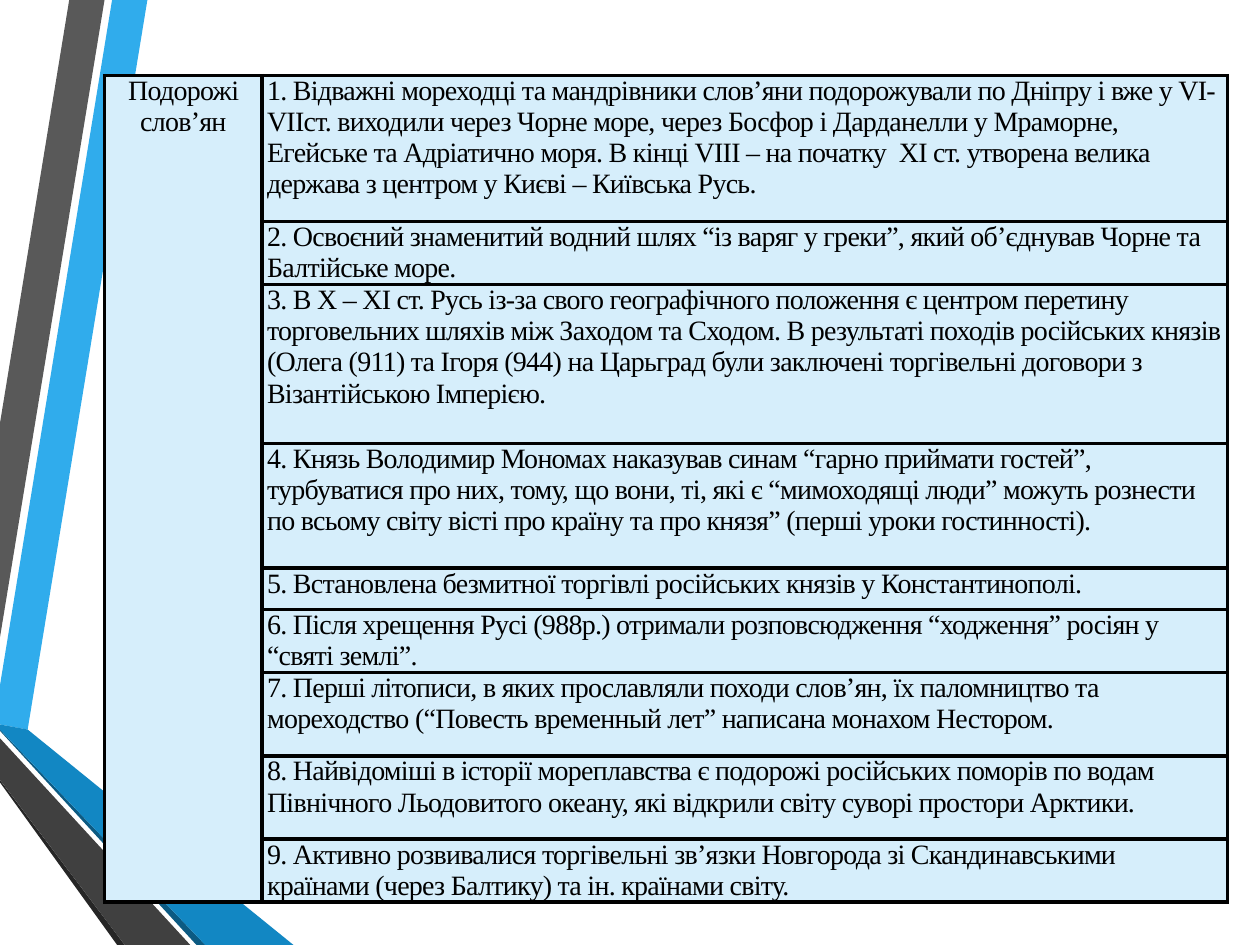
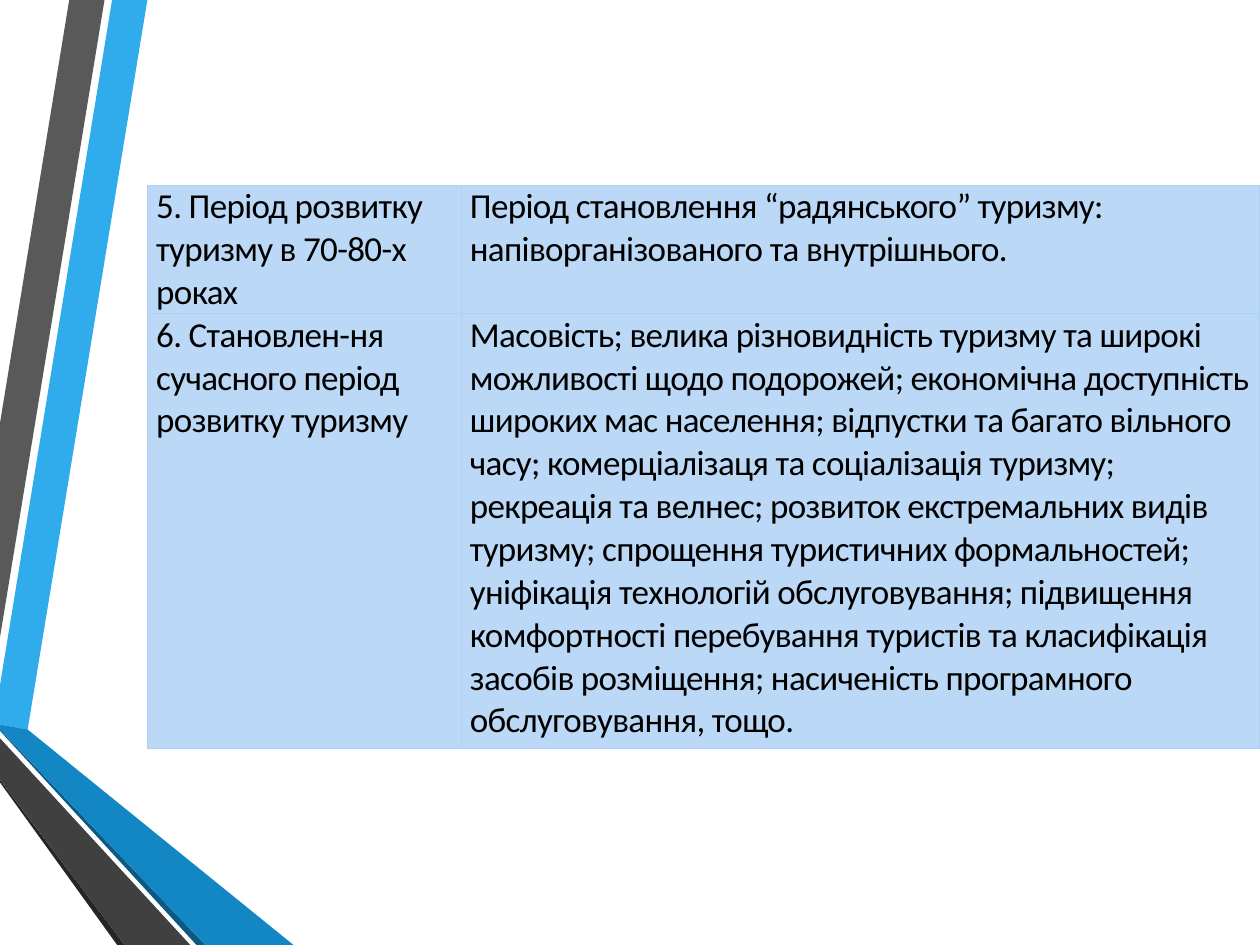
from lxml.etree import SubElement
from pptx import Presentation
from pptx.dml.color import RGBColor
from pptx.enum.text import PP_ALIGN
from pptx.oxml.ns import qn
from pptx.util import Inches, Pt

BANDS = [
    ("30ACEC", [(0, 5.44), (0, 5.75), (0.22, 5.79), (1.17, 0), (0.89, 0)]),
    ("595959", [(0.83, 0), (0.55, 0), (0, 3.36), (0, 5.06)]),
    ("262626", [(0, 6.19), (0, 6.21), (0.93, 7.5), (0.99, 7.5)]),
    ("0C5A82", [(0, 5.79), (0, 5.8), (1.56, 7.5), (1.63, 7.5)]),
    ("1287C3", [(0, 5.79), (1.63, 7.5), (2.33, 7.5), (0.22, 5.79), (0, 5.75)]),
    ("404040", [(0, 6.19), (0.99, 7.5), (1.51, 7.5), (0, 5.86)]),
]

JOURNEYS_STYLE = {"font": "Times New Roman", "size": 16, "fill": "D6EEFB",
                  "border": "000000", "border_width": 2.25, "inset": 0.04}
PERIODS_STYLE = {"font": "Calibri", "size": 20, "fill": "BBD9F6",
                 "border": "AED2F4", "border_width": 0.75, "inset": 0.07}

JOURNEYS_TITLE = "Подорожі слов’ян"
JOURNEYS = [
    (1.16, "1. Відважні мореходці та мандрівники слов’яни подорожували по Дніпру і вже у "
           "VI-VIIст. виходили через Чорне море, через Босфор і Дарданелли у Мраморне, "
           "Егейське та Адріатично моря. В кінці VIII – на початку  XI ст. утворена велика "
           "держава з центром у Києві – Київська Русь."),
    (0.5, "2. Освоєний знаменитий водний шлях “із варяг у греки”, який об’єднував Чорне та "
          "Балтійське море."),
    (1.26, "3. В X – XI ст. Русь із-за свого географічного положення є центром перетину "
           "торговельних шляхів між Заходом та Сходом. В результаті походів російських князів "
           "(Олега (911) та Ігоря (944) на Царьград були заключені торгівельні договори з "
           "Візантійською Імперією."),
    (0.99, "4. Князь Володимир Мономах наказував синам “гарно приймати гостей”, турбуватися "
           "про них, тому, що вони, ті, які є “мимоходящі люди” можуть рознести по всьому "
           "світу вісті про країну та про князя” (перші уроки гостинності)."),
    (0.33, "5. Встановлена безмитної торгівлі російських князів у Константинополі."),
    (0.5, "6. Після хрещення Русі (988р.) отримали розповсюдження “ходження” росіян у "
          "“святі землі”."),
    (0.66, "7. Перші літописи, в яких прославляли походи слов’ян, їх паломництво та "
           "мореходство (“Повесть временный лет” написана монахом Нестором."),
    (0.66, "8. Найвідоміші в історії мореплавства є подорожі російських поморів по водам "
           "Північного Льодовитого океану, які відкрили світу суворі простори Арктики."),
    (0.5, "9. Активно розвивалися торгівельні зв’язки Новгорода зі Скандинавськими країнами "
          "(через Балтику) та ін. країнами світу."),
]
PERIODS = [
    ("5. Період розвитку туризму в 70-80-х роках",
     "Період становлення “радянського” туризму: напіворганізованого та внутрішнього."),
    ("6. Становлен-ня сучасного період розвитку туризму",
     "Масовість; велика різновидність туризму та широкі можливості щодо подорожей; "
     "економічна доступність широких мас населення; відпустки та багато вільного часу; "
     "комерціалізаця та соціалізація туризму; рекреація та велнес; розвиток екстремальних "
     "видів туризму; спрощення туристичних формальностей; уніфікація технологій "
     "обслуговування; підвищення комфортності перебування туристів та класифікація засобів "
     "розміщення; насиченість програмного обслуговування, тощо."),
]


def color(value):
    return RGBColor.from_string(value)


def set_attributes(target, values):
    for name, value in values.items():
        setattr(target, name, value)


def add_band(page, fill, points):
    corners = [(Inches(x), Inches(y)) for x, y in points]
    builder = page.shapes.build_freeform(*corners[0])
    builder.add_line_segments(corners[1:], close=True)
    band = builder.convert_to_shape()
    band.shadow.inherit = False
    band.fill.solid()
    band.fill.fore_color.rgb = color(fill)
    band.line.fill.background()


def add_page(deck):
    """Add a blank slide with the shared bands on its left side."""
    page = deck.slides.add_slide(deck.slide_layouts[6])
    for fill, points in BANDS:
        add_band(page, fill, points)
    return page


def set_borders(cell, style):
    """Add the four border lines; they must come before the cell fill."""
    properties = cell._tc.get_or_add_tcPr()
    for side in ("a:lnL", "a:lnR", "a:lnT", "a:lnB"):
        line = SubElement(properties, qn(side), w=str(Pt(style["border_width"])))
        fill = SubElement(line, qn("a:solidFill"))
        SubElement(fill, qn("a:srgbClr"), val=style["border"])


def format_cell(cell, style):
    inset = Inches(style["inset"])
    set_attributes(cell, {"margin_left": inset, "margin_right": inset,
                          "margin_top": 0, "margin_bottom": 0})
    set_borders(cell, style)
    cell.fill.solid()
    cell.fill.fore_color.rgb = color(style["fill"])


def write_cell(cell, text, style, alignment=PP_ALIGN.LEFT):
    para = cell.text_frame.paragraphs[0]
    para.alignment = alignment
    span = para.add_run()
    span.text = text
    set_attributes(span.font, {"name": style["font"], "size": Pt(style["size"]),
                               "bold": False})
    span.font.color.rgb = color("000000")
    span.font._element.set("spc", "-40")


def add_grid(page, left, top, widths, heights, style):
    """Add a table whose cells are formatted but still empty."""
    frame = page.shapes.add_table(len(heights), len(widths), Inches(left), Inches(top),
                                  Inches(sum(widths)), Inches(sum(heights)))
    table = frame.table
    set_attributes(table, {"first_row": False, "horz_banding": False})
    for column, width in zip(table.columns, widths):
        column.width = Inches(width)
    for row, height in zip(table.rows, heights):
        row.height = Inches(height)
    for cell in table.iter_cells():
        format_cell(cell, style)
    return table


def add_journeys(page):
    heights = [height for height, _ in JOURNEYS]
    table = add_grid(page, 0.83, 0.6, [1.25, 7.66], heights, JOURNEYS_STYLE)
    title = table.cell(0, 0)
    title.merge(table.cell(len(JOURNEYS) - 1, 0))
    write_cell(title, JOURNEYS_TITLE, JOURNEYS_STYLE, PP_ALIGN.CENTER)
    for index, (_, text) in enumerate(JOURNEYS):
        write_cell(table.cell(index, 1), text, JOURNEYS_STYLE)


def add_periods(page):
    table = add_grid(page, 1.17, 1.47, [2.49, 6.34], [1.02, 3.45], PERIODS_STYLE)
    for row, texts in zip(table.rows, PERIODS):
        for cell, text in zip(row.cells, texts):
            write_cell(cell, text, PERIODS_STYLE)


def main():
    deck = Presentation()
    set_attributes(deck, {"slide_width": Inches(10), "slide_height": Inches(7.5)})
    add_journeys(add_page(deck))
    add_periods(add_page(deck))
    deck.save("out.pptx")


if __name__ == "__main__":
    main()
